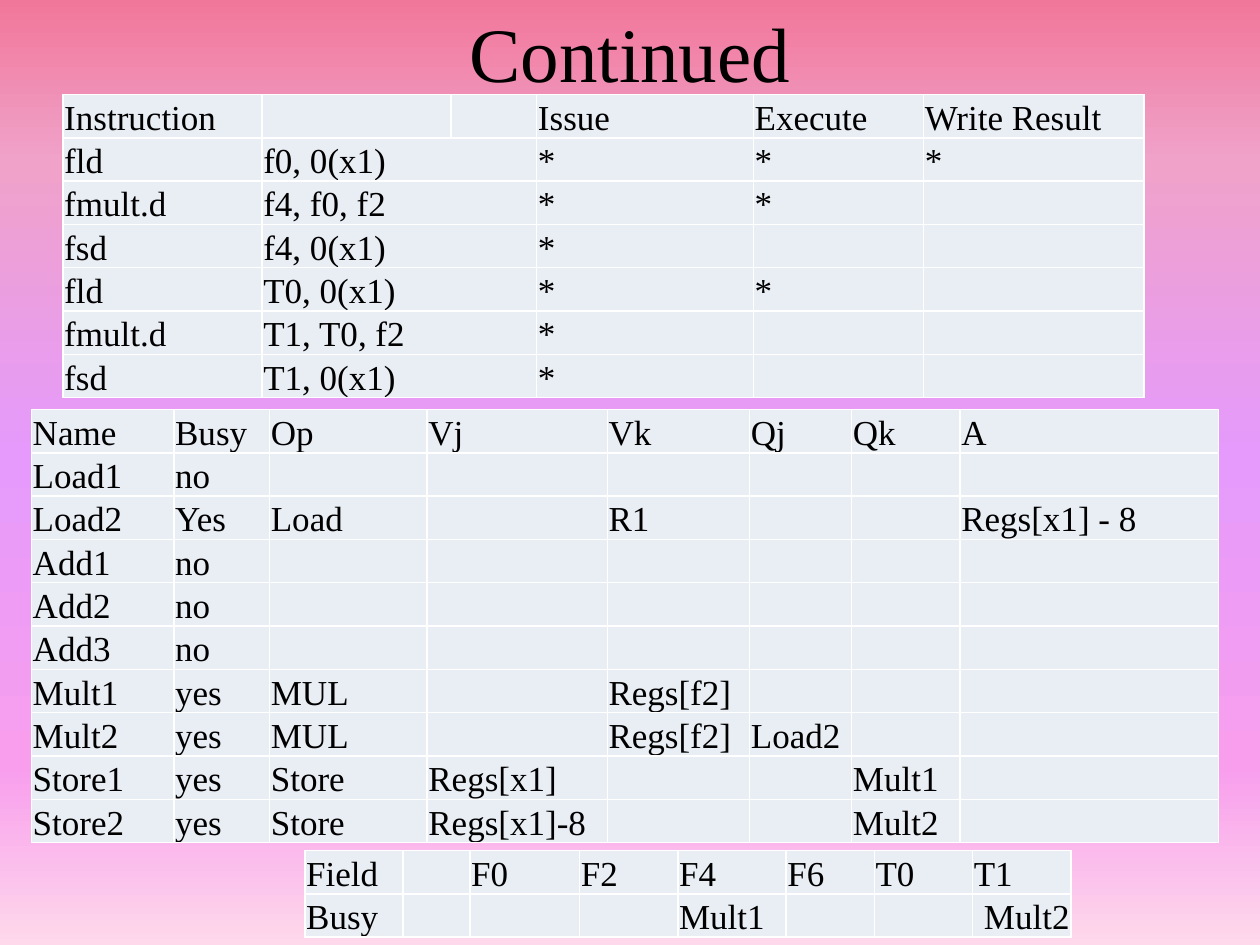
from dataclasses import dataclass, field

from lxml import etree
from pptx import Presentation
from pptx.dml.color import RGBColor
from pptx.enum.text import MSO_ANCHOR, PP_ALIGN
from pptx.oxml.ns import qn
from pptx.slide import Slide
from pptx.table import Table, _Cell
from pptx.text.text import _Paragraph
from pptx.util import Inches, Pt

BOTTOM, TOP = MSO_ANCHOR.BOTTOM, MSO_ANCHOR.TOP
CENTER, RIGHT = PP_ALIGN.CENTER, PP_ALIGN.RIGHT
FONT = "Times New Roman"
ROW = 0.32
COLORS = {"text": "000000", "cell": "E9EDF4", "line": "FFFFFF"}
STOPS = {0: "F1779A", 17: "F0A2C9", 48: "E59AFC", 81: "F89EED", 100: "FED8EB"}


@dataclass
class Grid:
    """A table with its place, column widths and sparse rows of text."""
    left: float
    top: float
    cols: list[float]
    rows: list[list[str]]
    spans: list[tuple[int, int, int]] = field(default_factory=list)


STATUS = Grid(
    0.5, 0.75, [1.58, 1.5, 0.68, 1.72, 1.35, 1.75],
    [
        ["Instruction", "", "", "Issue", "Execute", "Write Result"],
        ["fld", "f0, 0(x1)", "", "*", "*", "*"],
        ["fmult.d", "f4, f0, f2", "", "*", "*"],
        ["fsd", "f4, 0(x1)", "", "*"],
        ["fld", "T0, 0(x1)", "", "*", "*"],
        ["fmult.d", "T1, T0, f2", "", "*"],
        ["fsd", "T1, 0(x1)", "", "*"],
    ],
    [(row, 1, 2) for row in range(1, 7)],
)
STATIONS = Grid(
    0.25, 3.25, [1.13, 0.76, 1.25, 1.43, 1.13, 0.81, 0.86, 2.05],
    [
        ["Name", "Busy", "Op", "Vj", "Vk", "Qj", "Qk", "A"],
        ["Load1", "no"],
        ["Load2", "Yes", "Load", "", "R1", "", "", "Regs[x1] - 8"],
        ["Add1", "no"],
        ["Add2", "no"],
        ["Add3", "no"],
        ["Mult1", "yes", "MUL", "", "Regs[f2]"],
        ["Mult2", "yes", "MUL", "", "Regs[f2]", "Load2"],
        ["Store1", "yes", "Store", "Regs[x1]", "", "", "Mult1"],
        ["Store2", "yes", "Store", "Regs[x1]-8", "", "", "Mult2"],
    ],
)
FIELDS = Grid(
    2.42, 6.75, [0.78, 0.53, 0.87, 0.78, 0.86, 0.7, 0.78, 0.78],
    [
        ["Field", "", "F0", "F2", "F4", "F6", "T0", "T1"],
        ["Busy", "", "", "", "Mult1", "", "", "Mult2"],
    ],
)


def style(para: _Paragraph, size: int) -> None:
    """Format the runs of a paragraph."""
    for run in para.runs:
        run.font.name = FONT
        run.font.size = Pt(size)
        run.font.bold = False
        run.font.color.rgb = RGBColor.from_string(COLORS["text"])


def tint(parent: etree._Element, color: str) -> None:
    """Add an RGB colour to an XML element."""
    etree.SubElement(parent, qn("a:srgbClr"), val=color)


def paint(slide: Slide) -> None:
    """Fill the background with a vertical gradient."""
    fill = slide.background.fill
    fill.gradient()
    fill.gradient_angle = 270
    stops = slide.element.find(".//" + qn("a:gsLst"))
    for stop in list(stops):
        stops.remove(stop)
    for place, color in STOPS.items():
        tint(etree.SubElement(stops, qn("a:gs"), pos=str(place * 1000)), color)


def edge(cell: _Cell) -> None:
    """Draw the four borders of a cell."""
    props = cell._tc.get_or_add_tcPr()
    for spot, side in enumerate("LRTB"):
        line = etree.Element(qn("a:ln" + side), w=str(Pt(1)))
        tint(etree.SubElement(line, qn("a:solidFill")), COLORS["line"])
        props.insert(spot, line)


def dress(cell: _Cell, text: str) -> None:
    """Write and format one cell."""
    cell.margin_left = cell.margin_right = cell.margin_top = Inches(0.01)
    cell.margin_bottom = 0
    cell.vertical_anchor = BOTTOM
    cell.fill.solid()
    cell.fill.fore_color.rgb = RGBColor.from_string(COLORS["cell"])
    edge(cell)
    if text:
        cell.text_frame.text = text
        style(cell.text_frame.paragraphs[0], 20)


def draw(slide: Slide, grid: Grid) -> Table:
    """Draw a grid as a table."""
    count, width = len(grid.rows), len(grid.cols)
    table = slide.shapes.add_table(
        count, width, Inches(grid.left), Inches(grid.top),
        Inches(sum(grid.cols)), Inches(ROW * count)).table
    table.first_row = table.horz_banding = False
    for col, size in zip(table.columns, grid.cols):
        col.width = Inches(size)
    for y, texts in enumerate(grid.rows):
        table.rows[y].height = Inches(ROW)
        for x in range(width):
            dress(table.cell(y, x), texts[x] if x < len(texts) else "")
    for row, start, end in grid.spans:
        table.cell(row, start).merge(table.cell(row, end))
    return table


def head(slide: Slide, text: str) -> None:
    """Add the centred title."""
    box = slide.shapes.add_textbox(
        Inches(0.5), Inches(-0.08), Inches(9), Inches(1.25))
    frame = box.text_frame
    frame.word_wrap = True
    frame.vertical_anchor = TOP
    frame.margin_top = Inches(0.12)
    frame.text = text
    frame.paragraphs[0].alignment = CENTER
    style(frame.paragraphs[0], 44)


def main() -> None:
    """Build and save the slide."""
    deck = Presentation()
    deck.slide_width, deck.slide_height = Inches(10), Inches(7.5)
    slide = deck.slides.add_slide(deck.slide_layouts[6])
    paint(slide)
    head(slide, "Continued")
    draw(slide, STATUS)
    draw(slide, STATIONS)
    last = draw(slide, FIELDS).cell(1, 7)
    last.text_frame.paragraphs[0].alignment = RIGHT
    deck.save("out.pptx")


if __name__ == "__main__":
    main()
